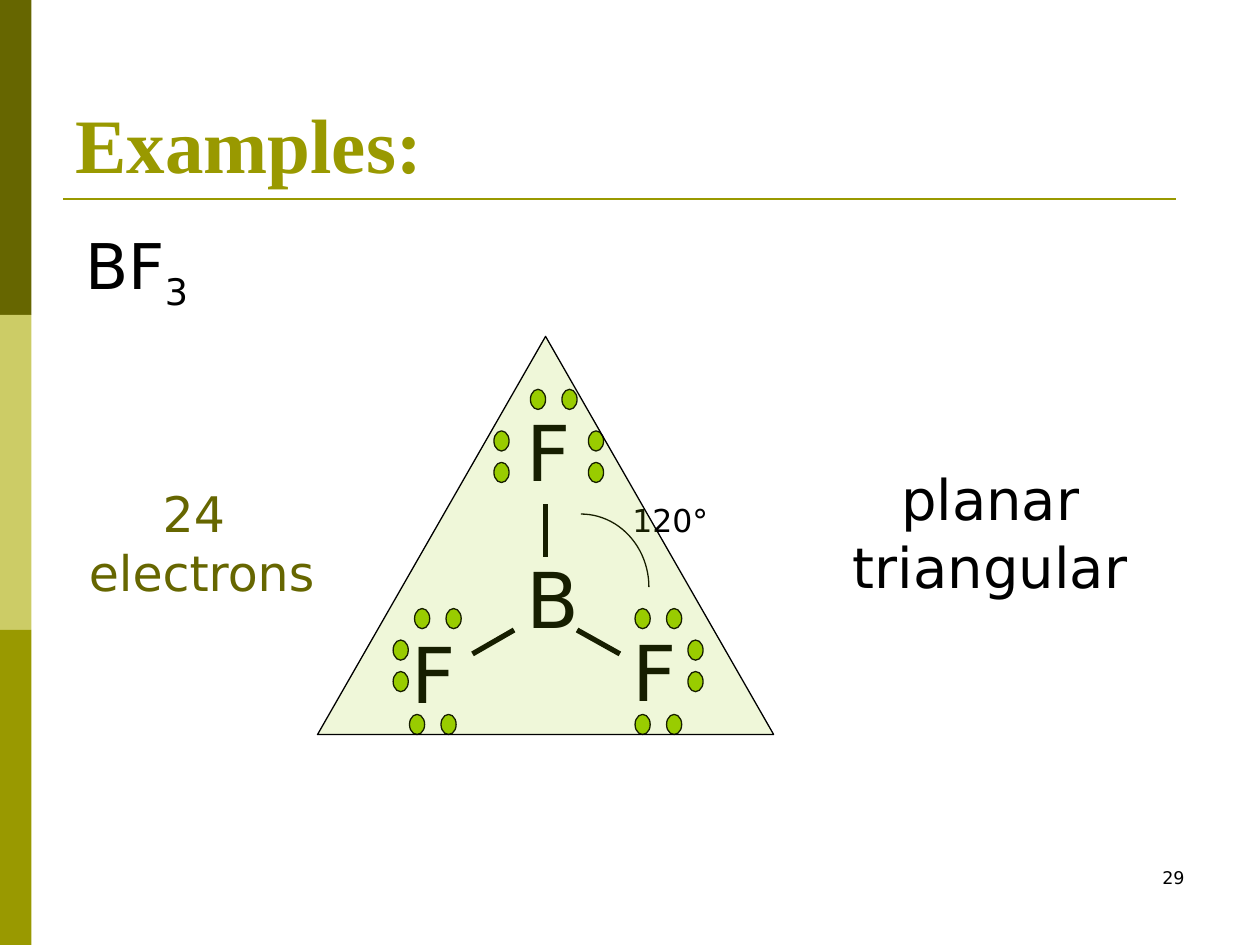
from dataclasses import dataclass

from lxml.etree import SubElement
from pptx import Presentation
from pptx.dml.color import RGBColor
from pptx.enum.shapes import MSO_CONNECTOR, MSO_SHAPE
from pptx.enum.text import MSO_ANCHOR, PP_ALIGN
from pptx.oxml.ns import qn
from pptx.util import Inches, Pt


@dataclass(frozen=True)
class Theme:
    body_font: str = "DejaVu Sans"
    title_font: str = "Times New Roman"
    black: str = "000000"
    dark_olive: str = "666600"
    pale_olive: str = "CCCC66"
    olive: str = "999900"
    green: str = "99CC00"
    title_size: int = 44
    atom_size: int = 44
    formula_size: int = 36
    geometry_size: int = 32
    count_size: int = 28
    angle_size: int = 18
    number_size: int = 10
    outline: float = 0.75
    rule: float = 1.5
    bond: float = 3


THEME = Theme()


def add_text(slide, box, text, size, color=THEME.black, font=THEME.body_font,
             align=PP_ALIGN.LEFT, anchor=MSO_ANCHOR.TOP, bold=False):
    frame = slide.shapes.add_textbox(*map(Inches, box)).text_frame
    frame.word_wrap = True
    frame.vertical_anchor = anchor
    paragraph = frame.paragraphs[0]
    paragraph.text = text
    paragraph.alignment = align
    paragraph.font.name = font
    paragraph.font.size = Pt(size)
    paragraph.font.bold = bold
    paragraph.font.color.rgb = RGBColor.from_string(color)
    return paragraph


def add_figure(slide, kind, box, fill=None, line=THEME.black, alpha=None):
    shape = slide.shapes.add_shape(kind, *map(Inches, box))
    shape.shadow.inherit = False
    if fill:
        shape.fill.solid()
        shape.fill.fore_color.rgb = RGBColor.from_string(fill)
    else:
        shape.fill.background()
    if line:
        shape.line.color.rgb = RGBColor.from_string(line)
        shape.line.width = Pt(THEME.outline)
    else:
        shape.line.fill.background()
    if alpha:
        color = shape.fill._xPr.find(qn("a:solidFill"))[0]
        SubElement(color, qn("a:alpha"), val=str(alpha * 1000))


def add_line(slide, start, end, color, width):
    line = slide.shapes.add_connector(MSO_CONNECTOR.STRAIGHT,
                                      *map(Inches, (*start, *end)))
    line.line.color.rgb = RGBColor.from_string(color)
    line.line.width = Pt(width)
    SubElement(line._element.spPr, qn("a:effectLst"))


def add_side_band(slide, box):
    left, top, width, height = box
    colors = (THEME.dark_olive, THEME.pale_olive, THEME.olive)
    part = height / len(colors)
    for index, color in enumerate(colors):
        add_figure(slide, MSO_SHAPE.RECTANGLE,
                   (left, top + index * part, width, part), color, line=None)


def add_heading(slide, box):
    left, top, width, height = box
    rule_top = top + height + 0.03
    add_line(slide, (left, rule_top), (left + 8.83, rule_top),
             THEME.olive, THEME.rule)
    add_text(slide, box, "Examples:", THEME.title_size, THEME.olive,
             THEME.title_font, anchor=MSO_ANCHOR.BOTTOM, bold=True)


def add_formula(slide, box):
    paragraph = add_text(slide, box, "BF", THEME.formula_size)
    subscript = paragraph.add_run()
    subscript.text = "3"
    subscript.font._element.set("baseline", "-25000")


def add_molecule(slide, box):
    left, top, width, height = box

    def at(x, y):
        return left + x, top + y

    # Atoms
    for symbol, x, y in (("B", 1.56, 1.66), ("F", 2.4, 2.24),
                         ("F", 0.65, 2.25), ("F", 1.56, 0.49)):
        add_text(slide, (*at(x, y), 0.67, 0.84), symbol, THEME.atom_size)

    # Bonds
    for start, end in (((1.81, 1.33), (1.81, 1.75)),
                       ((1.56, 2.33), (1.23, 2.52)),
                       ((2.4, 2.52), (2.06, 2.33))):
        add_line(slide, at(*start), at(*end), THEME.black, THEME.bond)

    # Lone pairs: first dot of each, then the step to the second
    gap = 0.25
    across = ((1.69, 0.42), (2.52, 2.16), (2.52, 3), (0.77, 2.16), (0.73, 3))
    upright = ((1.4, 0.75), (2.15, 0.75), (0.6, 2.41), (2.94, 2.41))
    for pairs, step_x, step_y in ((across, gap, 0), (upright, 0, gap)):
        for x, y in pairs:
            for dot in range(2):
                place = at(x + dot * step_x, y + dot * step_y)
                add_figure(slide, MSO_SHAPE.OVAL, (*place, 0.12, 0.16),
                           THEME.green)

    # Bond angle
    add_figure(slide, MSO_SHAPE.ARC, (*at(1.55, 1.41), 1.08, 1.16))
    add_text(slide, (*at(2.4, 1.26), 1.12, 0.4), "120°", THEME.angle_size)

    # Translucent plane over the molecule
    add_figure(slide, MSO_SHAPE.ISOSCELES_TRIANGLE, box, THEME.green, alpha=15)


def main():
    presentation = Presentation()
    presentation.slide_width = Inches(10)
    presentation.slide_height = Inches(7.5)
    slide = presentation.slides.add_slide(presentation.slide_layouts[6])

    add_side_band(slide, (0, 0, 0.25, 7.5))
    add_heading(slide, (0.5, 0.3, 9, 1.25))
    add_formula(slide, (0.58, 1.75, 1.5, 1.25))

    # Captions and slide number
    add_text(slide, (0.58, 3.79, 2.04, 1.04), "24 \velectrons",
             THEME.count_size, THEME.dark_olive, align=PP_ALIGN.CENTER)
    add_text(slide, (6.38, 3.64, 2.96, 1.18), "planar triangular",
             THEME.geometry_size, align=PP_ALIGN.CENTER)
    add_text(slide, (7.17, 6.83, 2.33, 0.5), "29", THEME.number_size,
             align=PP_ALIGN.RIGHT)

    add_molecule(slide, (2.52, 2.67, 3.62, 3.16))
    presentation.save("out.pptx")


if __name__ == "__main__":
    main()
